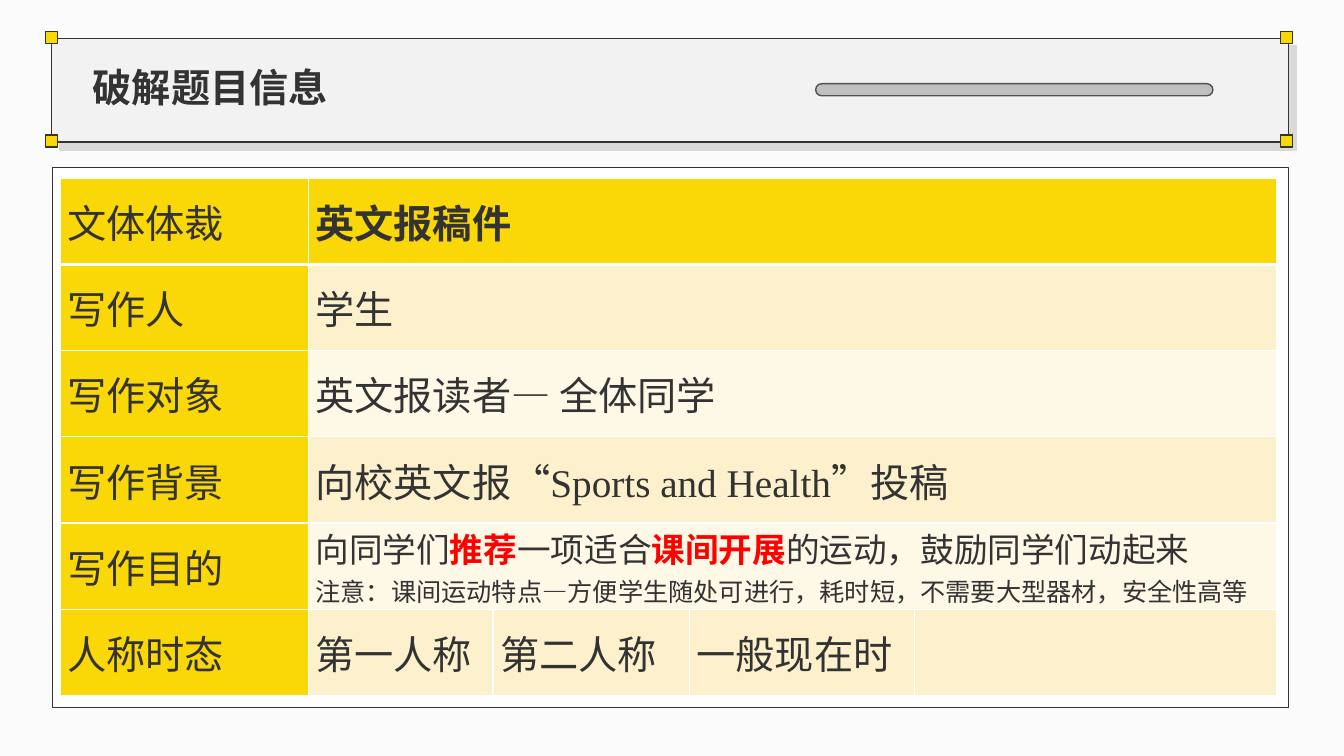
from dataclasses import dataclass
from itertools import product

from lxml import etree
from pptx import Presentation
from pptx import util as u
from pptx.dml.color import RGBColor
from pptx.enum import shapes, text
from pptx.oxml import ns


@dataclass(frozen=True)
class Theme:
    page: str = "FBFBFB"
    white: str = "FFFFFF"
    ink: str = "333333"
    yellow: str = "FAD706"
    band_dark: str = "FDF0CC"
    band_light: str = "FEF8E7"
    header: str = "F2F2F2"
    shadow: str = "D9D9D9"
    bar: str = "BFBFBF"
    bar_line: str = "525252"
    red: str = "FF0000"
    sans: str = "Noto Sans CJK SC"
    serif: str = "Times New Roman"
    title_font: str = "Arial"
    large: int = 28
    medium: int = 24
    small: int = 18


THEME = Theme()


@dataclass(frozen=True)
class Span:
    words: str
    size: int = THEME.large
    font: str = THEME.serif
    color: str = THEME.ink
    bold: bool = False


@dataclass(frozen=True)
class Block:
    left: float
    top: float
    width: float
    height: float
    fill: str
    line: str = THEME.ink
    kind: shapes.MSO_SHAPE = shapes.MSO_SHAPE.RECTANGLE


@dataclass(frozen=True)
class Row:
    label: str
    cells: list[list[list[Span]]]  # cells, their paragraphs, their spans
    fill: str
    justified: bool = True


def plain(words: str, bold: bool = False) -> list[list[Span]]:
    return [[Span(words, bold=bold)]]


def key(words: str) -> Span:
    return Span(words, THEME.medium, color=THEME.red, bold=True)


def medium(words: str) -> Span:
    return Span(words, THEME.medium)


PURPOSE = [
    [medium("向同学们"), key("推荐"), medium("一项适合"), key("课间开展"),
     medium("的运动，鼓励同学们动起来")],
    [Span("注意：课间运动特点—方便学生随处可进行，耗时短，不需要大型器材，安全性高等", THEME.small)],
]
ROWS = [
    Row("文体体裁", [plain("英文报稿件", bold=True)], THEME.yellow),
    Row("写作人", [plain("学生")], THEME.band_dark),
    Row("写作对象", [plain("英文报读者— 全体同学")], THEME.band_light),
    Row("写作背景", [plain("向校英文报“Sports and Health”投稿")], THEME.band_dark),
    Row("写作目的", [PURPOSE], THEME.band_light, justified=False),
    Row("人称时态", [plain("第一人称"), plain("第二人称"), plain("一般现在时"), []],
        THEME.band_dark),
]
COLUMN_WIDTHS = [2.46, 1.83, 1.95, 2.23, 3.59]
ROW_HEIGHT = 0.855

PANEL = Block(0.52, 1.66, 12.26, 5.36, THEME.white)
HEADER = Block(0.51, 0.38, 12.27, 1.03, THEME.header)
CORNERS = [Block(left, top, 0.12, 0.12, THEME.yellow)
           for left, top in product((0.45, 12.7), (0.31, 1.34))]
BAR = Block(8.09, 0.83, 3.94, 0.12, THEME.bar, THEME.bar_line,
            shapes.MSO_SHAPE.ROUNDED_RECTANGLE)


def rgb(code: str) -> RGBColor:
    return RGBColor.from_string(code)


def add_color(parent: etree._Element, code: str) -> None:
    etree.SubElement(parent, ns.qn("a:srgbClr"), val=code)


def draw_block(page, block: Block):
    shape = page.shapes.add_shape(
        block.kind, *map(u.Inches, (block.left, block.top, block.width, block.height)))
    shape.shadow.inherit = False
    shape.fill.solid()
    shape.fill.fore_color.rgb = rgb(block.fill)
    shape.line.color.rgb = rgb(block.line)
    shape.line.width = u.Pt(1)
    return shape


def cast_shadow(shape) -> None:
    """Give the shape a hard shadow to the lower right."""
    effects = shape._element.spPr.find(ns.qn("a:effectLst"))
    shadow = etree.SubElement(
        effects, ns.qn("a:outerShdw"), blurRad="0", dist=str(u.Pt(8)),
        dir=str(45 * 60000), algn="tl", rotWithShape="0")
    add_color(shadow, THEME.shadow)


def write_span(para, span: Span) -> None:
    run = para.add_run()
    run.text = span.words
    font = run.font
    font.size = u.Pt(span.size)
    font.name = span.font
    font.bold = span.bold
    font.color.rgb = rgb(span.color)
    east_asian = etree.Element(ns.qn("a:ea"), typeface=THEME.sans)
    run._r.get_or_add_rPr().find(ns.qn("a:latin")).addnext(east_asian)


def write_title(page, words: str) -> None:
    box = page.shapes.add_textbox(*map(u.Inches, (0.92, 0.39, 11.5, 0.94)))
    frame = box.text_frame
    frame.word_wrap = True
    frame.vertical_anchor = text.MSO_ANCHOR.MIDDLE
    frame.margin_left = frame.margin_right = frame.margin_top = frame.margin_bottom = 0
    write_span(frame.paragraphs[0], Span(words, font=THEME.title_font, bold=True))


def style_cell(cell, fill: str, top: int, bottom: int) -> None:
    """Set margins, white borders (top and bottom in points) and fill."""
    cell.margin_left = cell.margin_right = u.Inches(0.07)
    cell.margin_top = cell.margin_bottom = 0
    cell.vertical_anchor = text.MSO_ANCHOR.MIDDLE
    props = cell._tc.get_or_add_tcPr()
    for side, width in (("L", 1), ("R", 1), ("T", top), ("B", bottom)):
        border = etree.SubElement(props, ns.qn(f"a:ln{side}"), w=str(u.Pt(width)))
        add_color(etree.SubElement(border, ns.qn("a:solidFill")), THEME.white)
    cell.fill.solid()
    cell.fill.fore_color.rgb = rgb(fill)


def write_cell(cell, paragraphs: list[list[Span]], justified: bool) -> None:
    frame = cell.text_frame
    for index, spans in enumerate(paragraphs):
        para = frame.add_paragraph() if index else frame.paragraphs[0]
        if justified:
            para.alignment = text.PP_ALIGN.JUSTIFY
        for span in spans:
            write_span(para, span)


def draw_table(page) -> None:
    table = page.shapes.add_table(
        len(ROWS), len(COLUMN_WIDTHS), u.Inches(0.6), u.Inches(1.77),
        u.Inches(sum(COLUMN_WIDTHS)), u.Inches(ROW_HEIGHT * len(ROWS))).table
    table.first_row = table.horz_banding = False
    for column, width in zip(table.columns, COLUMN_WIDTHS):
        column.width = u.Inches(width)
    last = len(COLUMN_WIDTHS) - 1
    for r, row in enumerate(ROWS):
        table.rows[r].height = u.Inches(ROW_HEIGHT)
        for c in range(last + 1):
            style_cell(table.cell(r, c), row.fill if c else THEME.yellow,
                       top=3 if r == 1 else 1, bottom=3 if r == 0 else 1)
        if len(row.cells) == 1:
            table.cell(r, 1).merge(table.cell(r, last))
        label = [[Span(row.label, font=THEME.sans)]]
        for c, paragraphs in enumerate([label, *row.cells]):
            write_cell(table.cell(r, c), paragraphs, row.justified)


def main() -> None:
    deck = Presentation()
    deck.slide_width, deck.slide_height = u.Inches(13.33), u.Inches(7.5)
    page = deck.slides.add_slide(deck.slide_layouts[6])
    page.background.fill.solid()
    page.background.fill.fore_color.rgb = rgb(THEME.page)
    draw_block(page, PANEL)
    cast_shadow(draw_block(page, HEADER))
    for corner in CORNERS:
        draw_block(page, corner)
    draw_block(page, BAR).adjustments[0] = 0.5
    write_title(page, "破解题目信息")
    draw_table(page)
    deck.save("out.pptx")


if __name__ == "__main__":
    main()
